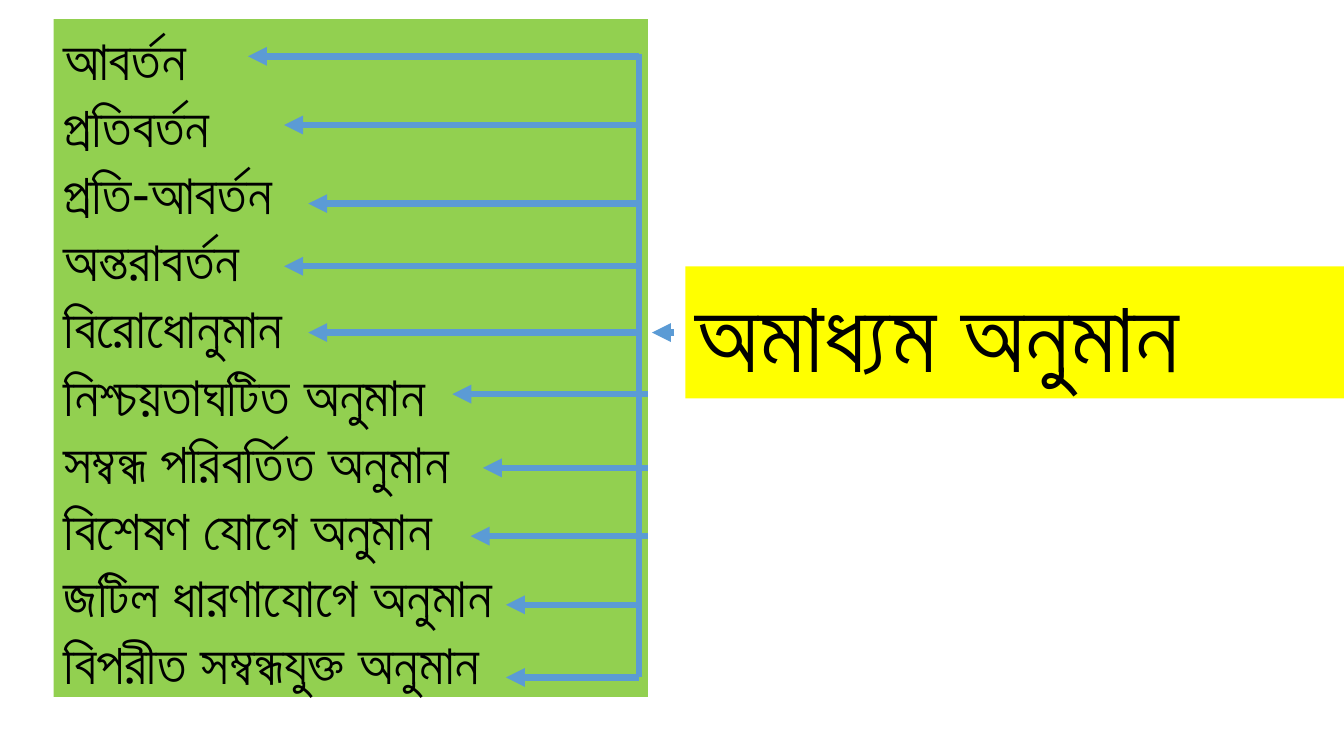
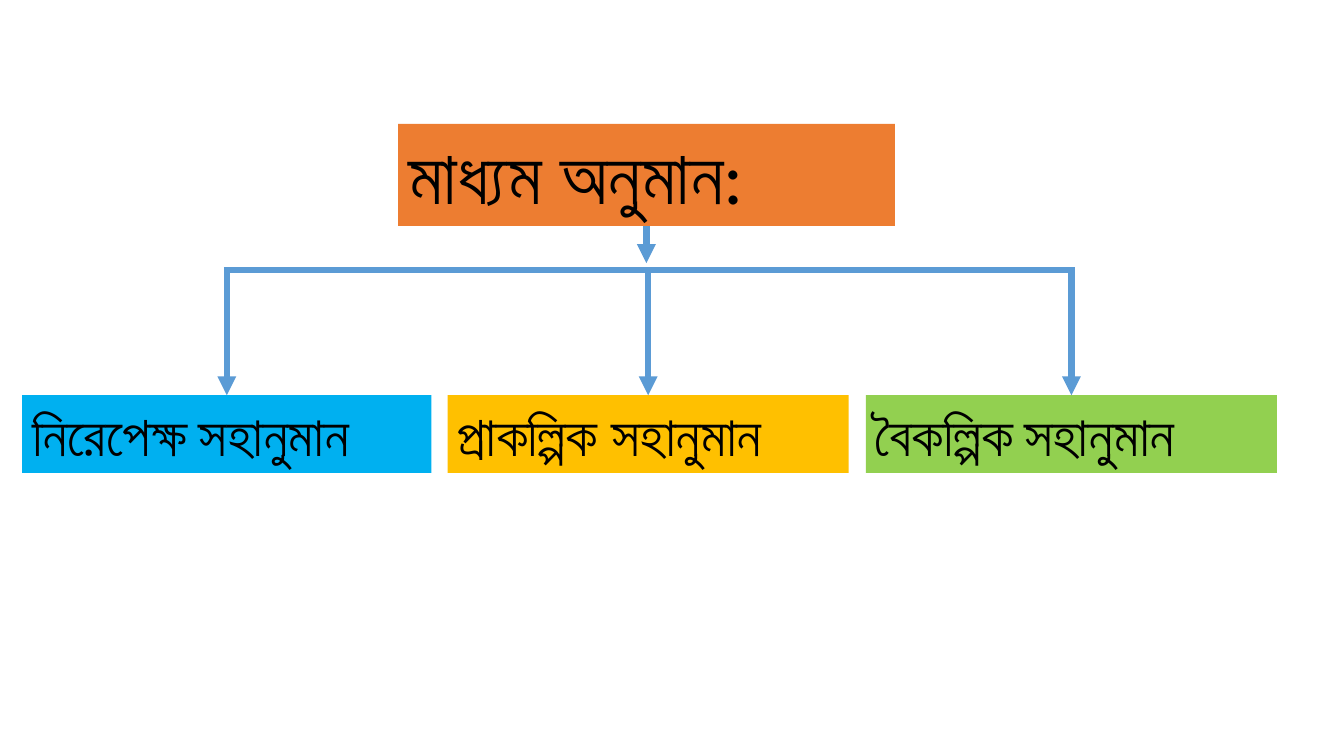
"""Two slides that classify immediate and mediate inference."""
import dataclasses
import typing

import lxml.etree
import pptx
import pptx.dml.color
import pptx.enum.shapes
import pptx.enum.text
import pptx.oxml.ns
import pptx.util

Cm = pptx.util.Cm
RGBColor = pptx.dml.color.RGBColor

BLACK = RGBColor(0x00, 0x00, 0x00)
YELLOW = RGBColor(0xFF, 0xFF, 0x00)
GREEN = RGBColor(0x92, 0xD0, 0x50)
ORANGE = RGBColor(0xED, 0x7D, 0x31)
GOLD = RGBColor(0xFF, 0xC0, 0x00)
SKY = RGBColor(0x00, 0xB0, 0xF0)
ARROW_BLUE = RGBColor(0x5B, 0x9B, 0xD5)
FONT = "Calibri"
LIST_SIZE = 40
TITLE_ONLY, TITLE_AND_LIST = 5, 1
TOP, BOTTOM = 0, 2


@dataclasses.dataclass(frozen=True)
class Area:
    """A rectangle in centimetres."""

    left: float
    top: float
    width: float
    height: float

    @property
    def right(self) -> float:
        """Give the right edge."""
        return self.left + self.width

    @property
    def middle(self) -> float:
        """Give the horizontal middle."""
        return self.left + self.width / 2


@dataclasses.dataclass(frozen=True)
class Branch:
    """A list entry and the arrow that points at it."""

    text: str
    tip: float
    height: float
    from_edge: bool = False


@dataclasses.dataclass(frozen=True)
class Kind:
    """A coloured box below the fork."""

    text: str
    area: Area
    fill: RGBColor
    space_size: typing.Optional[int] = None


LIST_AREA = Area(1.35, 0.48, 14.98, 17.33)
SPINE = 16.1
BRANCHES = (
    Branch("আবর্তন", 6.25, 1.42),
    Branch("প্রতিবর্তন", 7.16, 3.15),
    Branch("প্রতি-আবর্তন", 7.77, 5.13),
    Branch("অন্তরাবর্তন", 7.16, 6.71),
    Branch("বিরোধোনুমান", 7.77, 8.38),
    Branch("নিশ্চয়তাঘটিত অনুমান", 11.4, 9.93, True),
    Branch("সম্বন্ধ পরিবর্তিত অনুমান", 12.17, 11.79, True),
    Branch("বিশেষণ যোগে অনুমান", 11.86, 13.51, True),
    Branch("জটিল ধারণাযোগে অনুমান", 12.75, 15.24),
    Branch("বিপরীত সম্বন্ধযুক্ত অনুমান", 12.75, 17.07),
)
FORK_TOP = 6.81
KINDS = (
    Kind("নিরেপেক্ষ সহানুমান", Area(0.56, 9.96, 10.31, 1.96), SKY, 32),
    Kind("প্রাকল্পিক সহানুমান", Area(11.28, 9.96, 10.11, 1.96), GOLD),
    Kind("বৈকল্পিক সহানুমান", Area(21.82, 9.96, 10.36, 1.96), GREEN, 32),
)


def add_span(para, text: str, *, size: int) -> None:
    """Add a run in the deck's font."""
    span = para.add_run()
    span.text = text
    span.font.size = pptx.util.Pt(size)
    span.font.name = FONT
    span.font.color.rgb = BLACK


def write_text(box, text: str, *, size: int, space_size: typing.Optional[int] = None) -> None:
    """Write one plain left-aligned paragraph per line of text."""
    frame = box.text_frame
    frame.word_wrap = True
    frame.auto_size = pptx.enum.text.MSO_AUTO_SIZE.SHAPE_TO_FIT_TEXT
    frame.vertical_anchor = pptx.enum.text.MSO_ANCHOR.TOP
    for index, line in enumerate(text.split("\n")):
        para = frame.add_paragraph() if index else frame.paragraphs[0]
        para.alignment = pptx.enum.text.PP_ALIGN.LEFT
        para.line_spacing = 1.0
        para.space_before = para.space_after = pptx.util.Pt(0)
        properties = para._p.get_or_add_pPr()
        properties.set("marL", "0")
        properties.set("indent", "0")
        lxml.etree.SubElement(properties, pptx.oxml.ns.qn("a:buNone"))
        if space_size is None:
            add_span(para, line, size=size)
            continue
        for position, word in enumerate(line.split(" ")):
            if position:
                add_span(para, " ", size=space_size)
            add_span(para, word, size=size)


def place_box(box, area: Area, fill: RGBColor) -> None:
    """Move a text holder to its area and colour it."""
    box.left, box.top = Cm(area.left), Cm(area.top)
    box.width, box.height = Cm(area.width), Cm(area.height)
    box.fill.solid()
    box.fill.fore_color.rgb = fill


def add_title(page, text: str, area: Area, fill: RGBColor, *, size: int):
    """Format the title placeholder and return it."""
    title = page.shapes.title
    place_box(title, area, fill)
    write_text(title, text, size=size)
    return title


def add_line(page, start: tuple[float, float], end: tuple[float, float], *, arrow: bool = True):
    """Draw a blue line, with an arrowhead at its end by default."""
    line = page.shapes.add_connector(
        pptx.enum.shapes.MSO_CONNECTOR.STRAIGHT, *(Cm(value) for value in start + end))
    line.line.color.rgb = ARROW_BLUE
    line.line.width = pptx.util.Pt(4.5)
    if arrow:
        outline = line.line._get_or_add_ln()
        lxml.etree.SubElement(outline, pptx.oxml.ns.qn("a:tailEnd"), type="triangle")
    lxml.etree.SubElement(line._element.spPr, pptx.oxml.ns.qn("a:effectLst"))
    return line


def build_immediate(deck) -> None:
    """Build the list of immediate inferences."""
    page = deck.slides.add_slide(deck.slide_layouts[TITLE_AND_LIST])
    add_title(page, "অমাধ্যম অনুমান", Area(17.27, 6.71, 16.6, 3.33), YELLOW, size=72)
    body = page.placeholders[1]
    place_box(body, LIST_AREA, GREEN)
    write_text(body, "\n".join(branch.text for branch in BRANCHES), size=LIST_SIZE)
    add_line(page, (SPINE, 1.37), (SPINE, BRANCHES[-1].height), arrow=False)
    for branch in BRANCHES:
        start = LIST_AREA.right if branch.from_edge else SPINE
        add_line(page, (start, branch.height), (branch.tip, branch.height))
    add_line(page, (16.99, 8.38), (16.43, 8.38))


def build_mediate(deck) -> None:
    """Build the tree of mediate inferences."""
    page = deck.slides.add_slide(deck.slide_layouts[TITLE_ONLY])
    area = Area(10.03, 3.12, 12.52, 2.57)
    title = add_title(page, "মাধ্যম অনুমান:", area, ORANGE, size=54)
    stem = add_line(page, (area.middle, 5.69), (area.middle, 6.63))
    stem.begin_connect(title, BOTTOM)
    add_line(page, (5.64, FORK_TOP), (27.08, FORK_TOP), arrow=False)
    for kind in KINDS:
        box = page.shapes.add_textbox(0, 0, 0, 0)
        place_box(box, kind.area, kind.fill)
        write_text(box, kind.text, size=LIST_SIZE, space_size=kind.space_size)
        middle = kind.area.middle
        prong = add_line(page, (middle, FORK_TOP), (middle, kind.area.top))
        prong.end_connect(box, TOP)


def main() -> None:
    """Build and save the deck."""
    deck = pptx.Presentation()
    deck.slide_width, deck.slide_height = Cm(33.87), Cm(19.05)
    build_immediate(deck)
    build_mediate(deck)
    deck.save("out.pptx")


if __name__ == "__main__":
    main()
